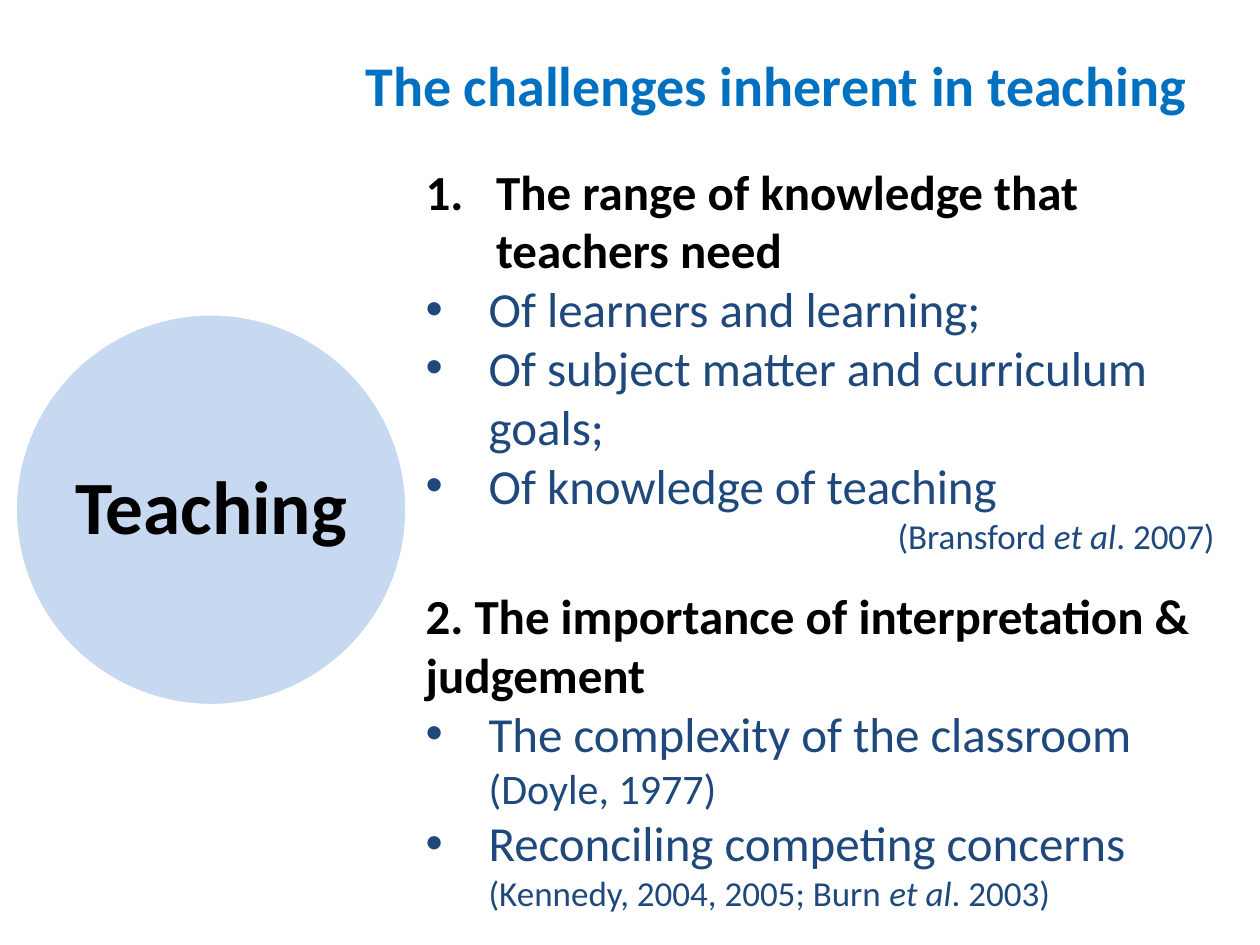
import pptx
import pptx.chart.data
import pptx.dml.color
import pptx.enum.shapes
import pptx.enum.text
import pptx.oxml.ns
import pptx.util
from lxml import etree

Inches = pptx.util.Inches
Pt = pptx.util.Pt
RGB = pptx.dml.color.RGBColor
Align = pptx.enum.text.PP_ALIGN
Anchor = pptx.enum.text.MSO_ANCHOR
qn = pptx.oxml.ns.qn

FONT = "Calibri"
BLUE = RGB(0x00, 0x70, 0xC0)
NAVY = RGB(0x1F, 0x49, 0x7D)
PALE = RGB(0x8E, 0xB4, 0xE3)
BLACK = RGB(0, 0, 0)
WHITE = RGB(255, 255, 255)


def add_run(para, text, size=28, color=NAVY, bold=False, italic=False):
    run = para.add_run()
    run.text = text
    font = run.font
    font.name, font.size = FONT, Pt(size)
    font.bold, font.italic = bold, italic
    font.color.rgb = color


def add_box(slide, left, top, width, height, anchor=Anchor.TOP):
    box = slide.shapes.add_textbox(
        Inches(left), Inches(top), Inches(width), Inches(height))
    frame = box.text_frame
    frame.word_wrap = True
    frame.vertical_anchor = anchor
    return frame


def next_para(frame):
    """Return the first paragraph while it is empty, else a new one."""
    first = frame.paragraphs[0]
    return frame.add_paragraph() if first.runs else first


def add_mark(para, indent, tag, **attrs):
    """Hang the paragraph behind a bullet or a number."""
    props = para._p.get_or_add_pPr()
    props.set("marL", str(Inches(indent)))
    props.set("indent", str(-Inches(indent)))
    if tag == "a:buChar":
        etree.SubElement(props, qn("a:buFont"), typeface="Arial")
    etree.SubElement(props, qn(tag), **attrs)


def add_head(frame, text, number=False):
    para = next_para(frame)
    if number:
        add_mark(para, 0.56, "a:buAutoNum", type="arabicPeriod")
    add_run(para, text, color=BLACK, bold=True)


def add_point(frame, text):
    para = next_para(frame)
    add_mark(para, 0.5, "a:buChar", char="•")
    add_run(para, text)
    return para


def add_cite(para, before, after):
    add_run(para, before, 20)
    add_run(para, "et al", 20, italic=True)
    add_run(para, after, 20)


def add_title(slide, text):
    frame = add_box(slide, 2.8, 0.04, 6.72, 1.25, Anchor.MIDDLE)
    para = next_para(frame)
    para.alignment = Align.CENTER
    add_run(para, text, 32, BLUE, True)


def add_disc(slide, text):
    side = Inches(3.11)
    disc = slide.shapes.add_shape(
        pptx.enum.shapes.MSO_SHAPE.OVAL, Inches(0.12), Inches(2.49), side, side)
    disc.shadow.inherit = False
    disc.fill.solid()
    disc.fill.fore_color.rgb = PALE
    tint = disc._element.spPr.find(qn("a:solidFill"))[0]
    etree.SubElement(tint, qn("a:alpha"), val="50000")
    disc.line.color.rgb = WHITE
    disc.line.width = Pt(2)
    frame = disc.text_frame
    frame.word_wrap = False
    frame.vertical_anchor = Anchor.MIDDLE
    frame.margin_left = frame.margin_right = 0
    frame.margin_top = frame.margin_bottom = 0
    para = next_para(frame)
    para.alignment = Align.CENTER
    para.line_spacing = 0.9
    add_run(para, text, 43, BLACK, True)


def add_range(slide):
    frame = add_box(slide, 3.28, 1.23, 6.46, 3.26)
    add_head(frame, "The range of knowledge that teachers need", number=True)
    for text in ("Of learners and learning;",
                 "Of subject matter and curriculum goals;",
                 "Of knowledge of teaching"):
        add_point(frame, text)
    para = next_para(frame)
    para.alignment = Align.RIGHT
    add_cite(para, "(Bransford ", ". 2007)")


def add_judge(slide):
    frame = add_box(slide, 3.28, 4.6, 6.46, 2.79)
    add_head(frame, "2. The importance of interpretation & judgement")
    para = add_point(frame, "The complexity of the classroom ")
    add_run(para, "(Doyle, 1977)", 24)
    para = add_point(frame, "Reconciling competing concerns ")
    add_cite(para, "(Kennedy, 2004, 2005; Burn ", ". 2003)")


def main():
    deck = pptx.Presentation()
    deck.slide_width, deck.slide_height = Inches(10), Inches(7.5)
    slide = deck.slides.add_slide(deck.slide_layouts[6])
    add_title(slide, "The challenges inherent in teaching")
    add_disc(slide, "Teaching")
    add_range(slide)
    add_judge(slide)
    deck.save("out.pptx")


if __name__ == "__main__":
    main()
